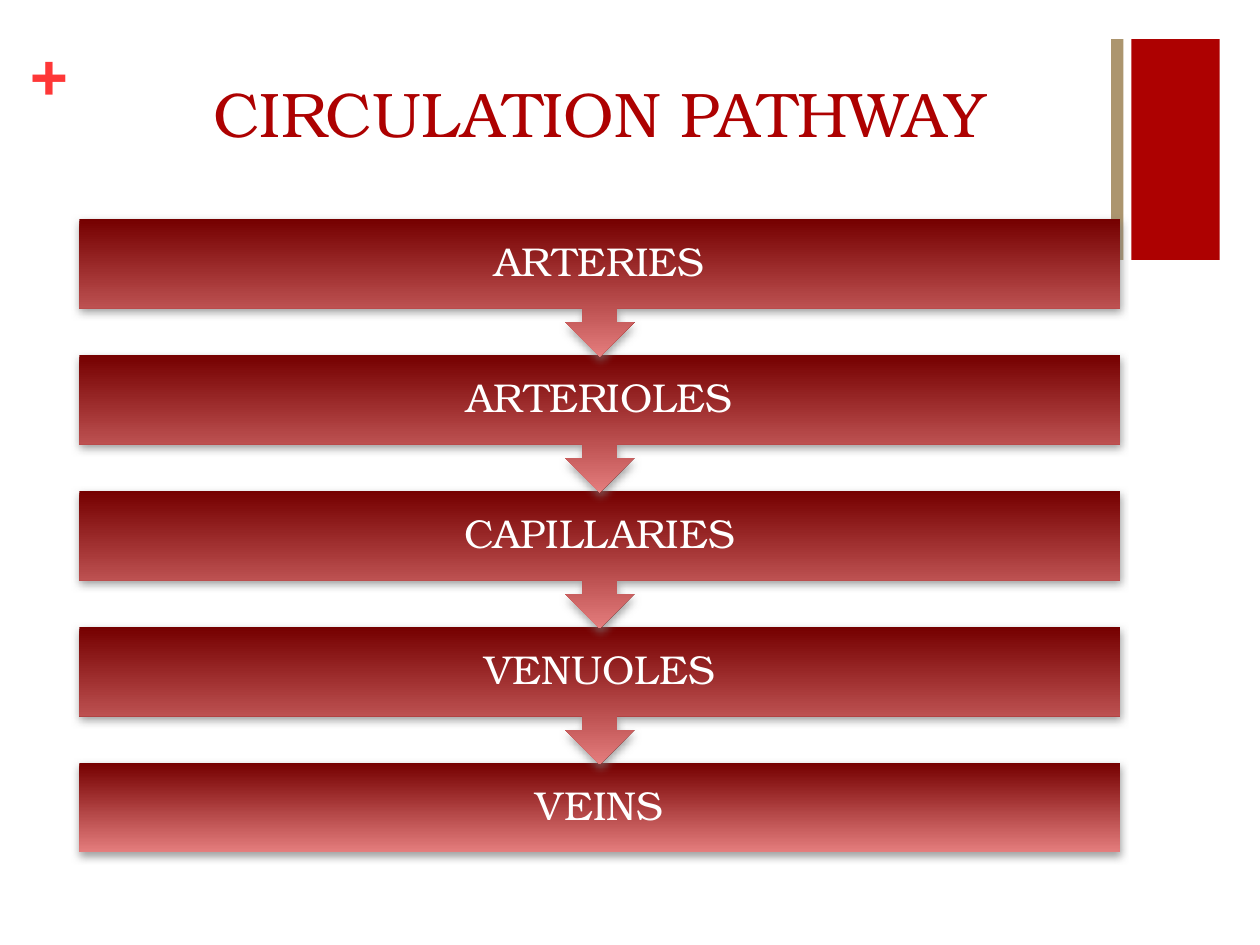
from lxml import etree
from pptx import Presentation
from pptx.dml.color import RGBColor
from pptx.enum.shapes import MSO_SHAPE
from pptx.enum.text import MSO_ANCHOR, PP_ALIGN
from pptx.oxml.ns import qn
from pptx.util import Cm, Pt

RECTANGLE = MSO_SHAPE.RECTANGLE
CALLOUT = MSO_SHAPE.DOWN_ARROW_CALLOUT
LEFT, CENTER = PP_ALIGN.LEFT, PP_ALIGN.CENTER
TOP, MIDDLE = MSO_ANCHOR.TOP, MSO_ANCHOR.MIDDLE

FONT = "TeX Gyre Bonum"
COLORS = {
    "red": "AD0101",
    "tan": "AC956E",
    "plus": "FE3737",
    "dark": "750000",
    "light": "E47D7D",
    "white": "FFFFFF",
    "shadow": "808080",
}
STAGES = ["ARTERIES", "ARTERIOLES", "CAPILLARIES", "VENUOLES", "VEINS"]
STAGE_LEFT, STAGE_TOP, STAGE_WIDTH = 1.6, 4.42, 20.98
STAGE_STEP, BOX_HEIGHT, CALLOUT_HEIGHT = 2.74, 1.8, 2.77


def color(name):
    return RGBColor.from_string(COLORS[name])


def write_text(shape, text, *, size, color_name, bold=False, align=CENTER,
               anchor=TOP, insets=(0.25, 0.13), line_spacing=None, space_after=0):
    """Fill a shape with one paragraph; insets are (horizontal, vertical) in cm."""
    frame = shape.text_frame
    frame.word_wrap = True
    frame.vertical_anchor = anchor
    frame.margin_left = frame.margin_right = Cm(insets[0])
    frame.margin_top = frame.margin_bottom = Cm(insets[1])
    paragraph = frame.paragraphs[0]
    paragraph.alignment = align
    paragraph.line_spacing = line_spacing
    paragraph.space_after = Pt(space_after)
    run = paragraph.add_run()
    run.text = text
    run.font.name = FONT
    run.font.size = Pt(size)
    run.font.bold = bold
    run.font.color.rgb = color(color_name)


class SlideBuilder:
    def __init__(self, slide):
        self.slide = slide

    def shape(self, kind, left, top, width, height):
        shape = self.slide.shapes.add_shape(
            kind, Cm(left), Cm(top), Cm(width), Cm(height))
        shape.shadow.inherit = False
        shape.line.fill.background()
        return shape

    def bar(self, left, top, width, height, color_name):
        bar = self.shape(RECTANGLE, left, top, width, height)
        bar.fill.solid()
        bar.fill.fore_color.rgb = color(color_name)

    def text(self, text, left, top, width, height, **text_format):
        box = self.slide.shapes.add_textbox(
            Cm(left), Cm(top), Cm(width), Cm(height))
        write_text(box, text, **text_format)

    def stage(self, text, kind, top, height):
        stage = self.shape(kind, STAGE_LEFT, top, STAGE_WIDTH, height)
        stage.fill.gradient()
        stage.fill.gradient_angle = 270  # counter-clockwise: runs top to bottom
        for stop, name in zip(stage.fill.gradient_stops, ("dark", "light")):
            stop.color.rgb = color(name)
        self.drop_shadow(stage)
        write_text(stage, text, size=23, color_name="white", anchor=MIDDLE,
                   insets=(0.46, 0.46), line_spacing=0.9, space_after=8)

    def drop_shadow(self, shape):
        effects = shape._element.spPr.find(qn("a:effectLst"))
        shadow = etree.SubElement(
            effects, qn("a:outerShdw"), blurRad=str(Pt(5)), dist=str(Pt(2)),
            dir="5400000", rotWithShape="0")
        shade = etree.SubElement(shadow, qn("a:srgbClr"), val=COLORS["shadow"])
        etree.SubElement(shade, qn("a:alpha"), val="75000")


def main():
    presentation = Presentation()
    presentation.slide_width, presentation.slide_height = Cm(25.4), Cm(19.05)
    builder = SlideBuilder(
        presentation.slides.add_slide(presentation.slide_layouts[6]))

    builder.bar(22.81, 0.79, 1.78, 4.45, "red")
    builder.text("+", 0.61, 0.64, 0.74, 1.55, size=36, color_name="plus",
                 bold=True, align=LEFT, insets=(0, 0))
    builder.bar(22.4, 0.79, 0.25, 4.45, "tan")
    builder.text("CIRCULATION PATHWAY", STAGE_LEFT, 1.37, STAGE_WIDTH, 3.1,
                 size=36, color_name="red")

    # Bottom to top, so that each arrow tip lies over the next box
    last = len(STAGES) - 1
    for index in range(last, -1, -1):
        kind, height = ((RECTANGLE, BOX_HEIGHT) if index == last
                        else (CALLOUT, CALLOUT_HEIGHT))
        builder.stage(STAGES[index], kind, STAGE_TOP + index * STAGE_STEP, height)

    presentation.save("out.pptx")


if __name__ == "__main__":
    main()
